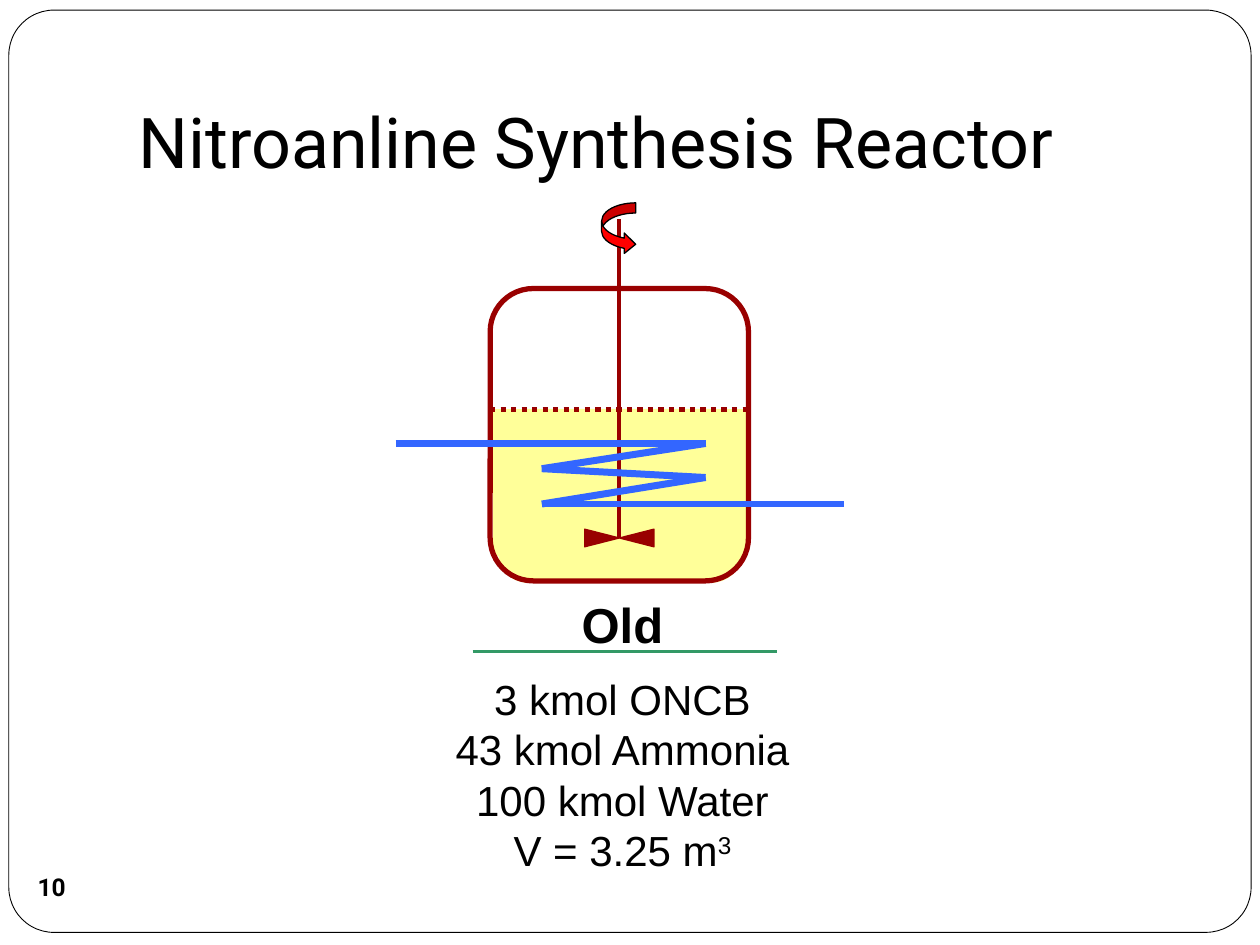
from itertools import pairwise

from lxml import etree
from pptx import Presentation
from pptx.dml.color import RGBColor
from pptx.enum.dml import MSO_LINE
from pptx.enum.shapes import MSO_CONNECTOR, MSO_SHAPE
from pptx.enum.text import MSO_ANCHOR, PP_ALIGN
from pptx.oxml.ns import qn
from pptx.util import Inches, Pt

RECT, ROUNDED = MSO_SHAPE.RECTANGLE, MSO_SHAPE.ROUNDED_RECTANGLE
COLLATE, CURVED_ARROW = MSO_SHAPE.FLOWCHART_COLLATE, MSO_SHAPE.CURVED_RIGHT_ARROW
STRAIGHT, DOTTED = MSO_CONNECTOR.STRAIGHT, MSO_LINE.ROUND_DOT
TOP, MIDDLE, BOTTOM = MSO_ANCHOR.TOP, MSO_ANCHOR.MIDDLE, MSO_ANCHOR.BOTTOM
LEFT, CENTER = PP_ALIGN.LEFT, PP_ALIGN.CENTER

COLORS = {
    "black": "000000",
    "white": "FFFFFF",
    "liquid": "FFFF99",
    "vessel": "990000",
    "coil": "3366FF",
    "rotation": "FF0000",
    "rule": "339966",
}


def color(name):
    return RGBColor.from_string(COLORS[name])


def add_shape(slide, kind, left, top, width, height, fill, line, weight=0.75):
    shape = slide.shapes.add_shape(
        kind, Inches(left), Inches(top), Inches(width), Inches(height))
    shape.shadow.inherit = False
    if fill:
        shape.fill.solid()
        shape.fill.fore_color.rgb = color(fill)
    else:
        shape.fill.background()
    shape.line.color.rgb = color(line)
    shape.line.width = Pt(weight)
    return shape


def add_line(slide, start, end, line, weight):
    connector = slide.shapes.add_connector(
        STRAIGHT, *(Inches(value) for value in (*start, *end)))
    connector.line.color.rgb = color(line)
    connector.line.width = Pt(weight)
    etree.SubElement(connector._element.spPr, qn("a:effectLst"))
    return connector


def add_frame(slide, left, top, width, height, **settings):
    box = slide.shapes.add_textbox(
        Inches(left), Inches(top), Inches(width), Inches(height))
    for name, value in settings.items():
        setattr(box.text_frame, name, value)
    return box.text_frame


def add_run(paragraph, text, **font_format):
    run = paragraph.add_run()
    run.text = text
    run.font.color.rgb = color("black")
    for name, value in font_format.items():
        setattr(run.font, name, value)
    return run


def add_page_border(slide, left, top, width, height):
    border = add_shape(slide, ROUNDED, left, top, width, height, "white", "black", 0.5)
    border.adjustments[0] = 0.049


def add_title(slide, left, top, width, height, text):
    frame = add_frame(slide, left, top, width, height, word_wrap=True,
                      vertical_anchor=BOTTOM, margin_bottom=Inches(0.1))
    add_run(frame.paragraphs[0], text, name="Roboto", size=Pt(40))


def add_page_number(slide, left, top, size, number):
    frame = add_frame(slide, left, top, size, size, word_wrap=False,
                      vertical_anchor=MIDDLE, margin_left=0, margin_right=0,
                      margin_top=0, margin_bottom=0)
    frame.paragraphs[0].alignment = CENTER
    add_run(frame.paragraphs[0], number, name="Roboto", size=Pt(14), bold=True)


def add_reactor(slide, left, top, width, height):
    right, middle = left + width, left + width / 2
    level = top + 0.96

    # Liquid: square upper corners, rounded bottom
    side_width, side_height = 0.48, 1.16
    for side_left in (left + 0.03, right - 0.02 - side_width):
        add_shape(slide, RECT, side_left, level, side_width, side_height,
                  "liquid", "liquid")
    add_shape(slide, ROUNDED, left + 0.07, level, width - 0.13, height - 0.95,
              "liquid", "liquid")

    # Vessel wall
    add_shape(slide, ROUNDED, left, top, width, height, None, "vessel", 3)

    # Stirrer shaft and blades
    shaft_bottom = top + 1.98
    add_line(slide, (middle, top - 0.55), (middle, shaft_bottom), "vessel", 2.5)
    blade_width, blade_length = 0.14, 0.55
    blades = add_shape(slide, COLLATE, middle - blade_width / 2,
                       shaft_bottom - blade_length / 2, blade_width, blade_length,
                       "vessel", "vessel")
    blades.rotation = 90

    # Liquid surface
    surface = add_line(slide, (left, level), (right, level), "vessel", 3)
    surface.line.dash_style = DOTTED

    # Direction of rotation
    rotation = add_shape(slide, CURVED_ARROW, middle - 0.14, top - 0.68, 0.27, 0.41,
                         "rotation", "black")
    for index, value in enumerate((0.3, 0.6, 0.333)):
        rotation.adjustments[index] = value

    # Coil from inlet to outlet
    coil_left, coil_right = left + 0.41, right - 0.34
    coil = [(left - 0.75, 1.23), (coil_right, 1.23), (coil_left, 1.43),
            (coil_right, 1.5), (coil_left, 1.71), (right + 0.76, 1.71)]
    for (x1, y1), (x2, y2) in pairwise(coil):
        add_line(slide, (x1, top + y1), (x2, top + y2), "coil", 4)


def add_charge(slide, left, top, width, height, heading, amounts):
    frame = add_frame(slide, left, top, width, height, word_wrap=False)
    paragraph = frame.paragraphs[0]
    paragraph.alignment = CENTER
    paragraph.space_after = Pt(11.5)
    add_run(paragraph, heading, name="Arial", size=Pt(28), bold=True)
    for text, exponent in amounts:
        paragraph = frame.add_paragraph()
        paragraph.alignment = CENTER
        add_run(paragraph, text, name="Arial", size=Pt(24))
        if exponent:
            run = add_run(paragraph, exponent, name="Arial", size=Pt(24))
            run._r.get_or_add_rPr().set("baseline", "30000")

    # Rule below the heading
    rule_y = top + 0.5
    add_line(slide, (left + 0.25, rule_y), (left + width - 0.21, rule_y), "rule", 2)


def main():
    prs = Presentation()
    prs.slide_width, prs.slide_height = Inches(10), Inches(7.5)
    slide = prs.slides.add_slide(prs.slide_layouts[6])

    add_page_border(slide, 0.07, 0.08, 9.86, 7.32)
    add_title(slide, 1, 0.3, 8.5, 1.25, "Nitroanline Synthesis Reactor")
    add_page_number(slide, 0.16, 6.79, 0.5, "10")
    add_reactor(slide, 3.89, 2.29, 2.05, 2.32)
    add_charge(slide, 3.5, 4.67, 2.88, 2.36, "Old", [
        ("3 kmol ONCB", ""),
        ("43 kmol Ammonia", ""),
        ("100 kmol Water", ""),
        ("V = 3.25 m", "3"),
    ])
    prs.save("out.pptx")


if __name__ == "__main__":
    main()
